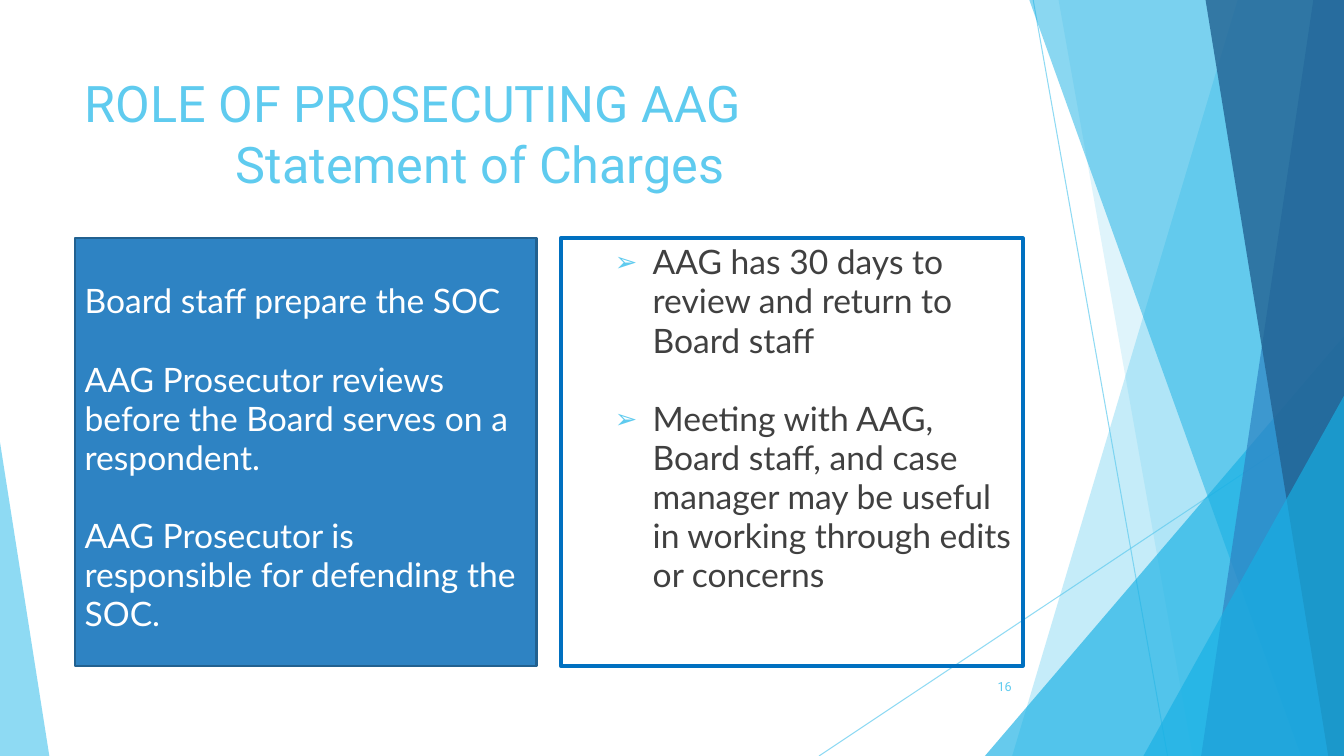
import pptx
import pptx.dml.color
import pptx.enum.shapes
import pptx.enum.text
import pptx.oxml.ns
import pptx.util
import lxml.etree

RGBColor = pptx.dml.color.RGBColor
SKY = RGBColor(0x5F, 0xCB, 0xEF)
CYAN = RGBColor(0x17, 0xB0, 0xE4)
BLUE = RGBColor(0x2E, 0x83, 0xC3)
NAVY = RGBColor(0x22, 0x62, 0x92)
EDGE = RGBColor(0x22, 0x61, 0x90)
FRAME = RGBColor(0x00, 0x70, 0xC0)
GRAY = RGBColor(0x40, 0x40, 0x40)
WHITE = RGBColor(0xFF, 0xFF, 0xFF)

EMU_PER_PX = 9525
WIDTH, HEIGHT = 1280, 720
BODY_TOP, BODY_WIDTH, BODY_HEIGHT = 227, 440, 407
PARAGRAPH_GAP = 28


def px(value):
    return pptx.util.Emu(value * EMU_PER_PX)


def add_xml(parent, tag, **attributes):
    return lxml.etree.SubElement(parent, pptx.oxml.ns.qn(tag), attributes)


class SlideBuilder:
    heading_font = "Roboto"
    body_font = "Lato"

    def __init__(self, presentation):
        self.slide = presentation.slides.add_slide(presentation.slide_layouts[3])
        self.shapes = self.slide.shapes

    def set_alpha(self, shape, percent):
        for color in shape.element.iter(pptx.oxml.ns.qn("a:srgbClr")):
            add_xml(color, "a:alpha", val=str(percent * 1000))

    def paint(self, shape, color, percent):
        shape.shadow.inherit = False
        shape.fill.solid()
        shape.fill.fore_color.rgb = color
        shape.line.fill.background()
        self.set_alpha(shape, percent)

    def line(self, x1, y1, x2, y2):
        connector = self.shapes.add_connector(
            pptx.enum.shapes.MSO_CONNECTOR.STRAIGHT, px(x1), px(y1), px(x2), px(y2))
        connector.line.color.rgb = SKY
        connector.line.width = pptx.util.Pt(0.75)
        add_xml(connector.element.spPr, "a:effectLst")
        self.set_alpha(connector, 70)

    def band(self, top_x, bottom_x, color, percent):
        builder = self.shapes.build_freeform(px(top_x), px(-1))
        builder.add_line_segments([
            (px(WIDTH), px(-1)), (px(WIDTH), px(HEIGHT)), (px(bottom_x), px(HEIGHT))])
        self.paint(builder.convert_to_shape(), color, percent)

    def triangle(self, left, top, width, apex, color, percent):
        shape = self.shapes.add_shape(
            pptx.enum.shapes.MSO_SHAPE.ISOSCELES_TRIANGLE,
            px(left), px(top), px(width), px(HEIGHT - top))
        shape.adjustments[0] = apex
        self.paint(shape, color, percent)

    def place(self, shape, left, top, width, height):
        self.shapes.element.append(shape.element)
        shape.left, shape.top = px(left), px(top)
        shape.width, shape.height = px(width), px(height)
        frame = shape.text_frame
        frame.word_wrap = True
        frame.auto_size = pptx.enum.text.MSO_AUTO_SIZE.NONE
        frame.vertical_anchor = pptx.enum.text.MSO_ANCHOR.TOP
        return frame

    def run(self, paragraph, text, font, size, color):
        run = paragraph.add_run()
        run.text = text
        run.font.name = font
        run.font.size = pptx.util.Pt(size)
        run.font.color.rgb = color

    def title(self, first_line, second_line):
        frame = self.place(self.shapes.title, 71, 64, 902, 138)
        paragraph = frame.paragraphs[0]
        paragraph.alignment = pptx.enum.text.PP_ALIGN.LEFT
        tabs = add_xml(paragraph._p.get_or_add_pPr(), "a:tabLst")
        add_xml(tabs, "a:tab", pos=str(px(144)), algn="l")
        self.run(paragraph, first_line, self.heading_font, 36, SKY)
        paragraph.add_line_break()
        self.run(paragraph, "\t" + second_line, self.heading_font, 36, SKY)

    def body(self, index, left, texts, color, edge, edge_width,
             fill=None, bullet=None, top_inset=5):
        shape = self.slide.placeholders[index]
        frame = self.place(shape, left, BODY_TOP, BODY_WIDTH, BODY_HEIGHT)
        frame.margin_top = px(top_inset)
        shape.line.color.rgb = edge
        shape.line.width = pptx.util.Pt(edge_width)
        if fill is None:
            shape.fill.background()
        else:
            shape.fill.solid()
            shape.fill.fore_color.rgb = fill
        for position, text in enumerate(texts):
            paragraph = frame.add_paragraph() if position else frame.paragraphs[0]
            self.set_bullet(paragraph, bullet)
            paragraph.line_spacing = 0.97
            paragraph.space_before = pptx.util.Pt(PARAGRAPH_GAP if position else 0)
            paragraph.alignment = pptx.enum.text.PP_ALIGN.LEFT
            self.run(paragraph, text, self.body_font, 24, color)

    def set_bullet(self, paragraph, bullet):
        properties = paragraph._p.get_or_add_pPr()
        if bullet is None:
            properties.set("marL", "0")
            properties.set("indent", "0")
            add_xml(properties, "a:buNone")
            return
        paragraph.level = 1
        properties.set("marL", str(px(78)))
        properties.set("indent", str(px(-36)))
        add_xml(add_xml(properties, "a:buClr"), "a:srgbClr", val=str(SKY))
        add_xml(properties, "a:buSzPct", val="80000")
        add_xml(properties, "a:buChar", char=bullet)

    def page_number(self, text):
        box = self.shapes.add_textbox(0, 0, 0, 0)
        frame = self.place(box, 901, 635, 72, 38)
        frame.vertical_anchor = pptx.enum.text.MSO_ANCHOR.MIDDLE
        paragraph = frame.paragraphs[0]
        paragraph.alignment = pptx.enum.text.PP_ALIGN.RIGHT
        self.run(paragraph, text, self.heading_font, 9, SKY)


def main():
    presentation = pptx.Presentation()
    presentation.slide_width, presentation.slide_height = px(WIDTH), px(HEIGHT)
    builder = SlideBuilder(presentation)

    builder.line(984, 0, 1112, HEIGHT)
    builder.line(WIDTH, 387, 780, HEIGHT)
    builder.band(1179, 964, SKY, 36)
    builder.band(1008, 1136, SKY, 20)
    builder.triangle(938, 320, 342, 1, CYAN, 66)
    builder.band(980, 1239, CYAN, 50)
    builder.band(1251, 1144, BLUE, 70)
    builder.band(1148, 1265, NAVY, 80)
    builder.triangle(1089, 377, 191, 1, CYAN, 66)
    builder.triangle(0, 421, 47, 0, SKY, 70)

    builder.title("ROLE OF PROSECUTING AAG", "Statement of Charges")
    builder.body(1, 71, [
        "Board staff prepare the SOC",
        "AAG Prosecutor reviews before the Board serves on a respondent.",
        "AAG Prosecutor is responsible for defending the SOC.",
    ], WHITE, EDGE, 1.5, fill=BLUE, top_inset=42)
    builder.body(2, 534, [
        "AAG has 30 days to review and return to Board staff",
        "Meeting with AAG, Board staff, and case manager may be useful "
        "in working through edits or concerns",
    ], GRAY, FRAME, 3, bullet="➢")
    builder.page_number("16")
    presentation.save("out.pptx")


if __name__ == "__main__":
    main()
